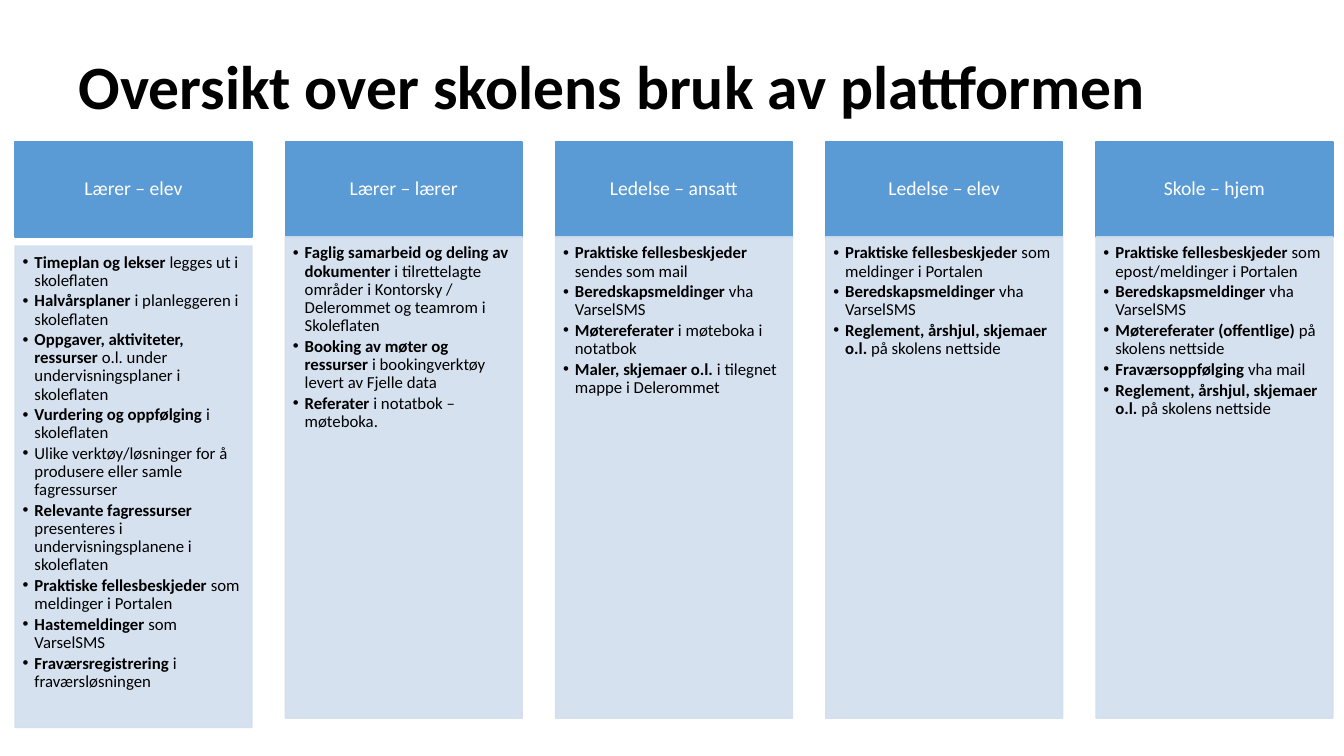
from dataclasses import dataclass

from lxml.etree import SubElement
from pptx import Presentation
from pptx.dml.color import RGBColor
from pptx.enum.shapes import MSO_SHAPE
from pptx.enum.text import MSO_ANCHOR, PP_ALIGN
from pptx.oxml.ns import qn
from pptx.shapes.autoshape import Shape
from pptx.slide import Slide
from pptx.text.text import TextFrame, _Paragraph
from pptx.util import Cm, Pt


@dataclass(frozen=True)
class Theme:
    font: str = "Calibri"
    black: RGBColor = RGBColor(0x00, 0x00, 0x00)
    white: RGBColor = RGBColor(0xFF, 0xFF, 0xFF)
    heading_blue: RGBColor = RGBColor(0x5B, 0x9B, 0xD5)
    body_blue: RGBColor = RGBColor(0xD2, 0xDE, 0xEF)
    body_opacity: int = 90
    title_size: int = 44
    heading_size: int = 14
    body_size: int = 12
    line_spacing: float = 0.9


@dataclass(frozen=True)
class Practice:
    emphasis: str
    detail: str = ""


@dataclass(frozen=True)
class Channel:
    heading: str
    practices: tuple[Practice, ...]
    gap: float = 0


@dataclass(frozen=True)
class Area:
    left: float
    top: float
    width: float
    height: float


THEME = Theme()
FIRST_LEFT = 0.38
COLUMN_STEP = 6.81
COLUMN_WIDTH = 5.97
HEADING_TOP = 3.58
HEADING_HEIGHT = 2.39
BODY_HEIGHT = 12.13
BULLET_INDENT = 0.3

CHANNELS = (
    Channel("Lærer – elev", (
        Practice("Timeplan og lekser ", "legges ut i skoleflaten"),
        Practice("Halvårsplaner", " i planleggeren i skoleflaten"),
        Practice("Oppgaver, aktiviteter, ressurser ", "o.l. under undervisningsplaner i skoleflaten"),
        Practice("Vurdering og oppfølging ", "i skoleflaten"),
        Practice("", "Ulike verktøy/løsninger for å produsere eller samle fagressurser"),
        Practice("Relevante fagressurser ", "presenteres i undervisningsplanene i skoleflaten"),
        Practice("Praktiske fellesbeskjeder ", "som meldinger i Portalen"),
        Practice("Hastemeldinger", " som VarselSMS"),
        Practice("Fraværsregistrering", " i fraværsløsningen"),
    ), gap=0.23),
    Channel("Lærer – lærer", (
        Practice("Faglig samarbeid og deling av dokumenter ",
                 "i tilrettelagte områder i Kontorsky / Delerommet og teamrom i Skoleflaten"),
        Practice("Booking av møter og ressurser", " i bookingverktøy levert av Fjelle data"),
        Practice("Referater ", "i notatbok – møteboka."),
    )),
    Channel("Ledelse – ansatt", (
        Practice("Praktiske fellesbeskjeder", " sendes som mail"),
        Practice("Beredskapsmeldinger ", "vha VarselSMS"),
        Practice("Møtereferater ", "i møteboka i notatbok"),
        Practice("Maler, skjemaer o.l.", " i tilegnet mappe i Delerommet"),
    )),
    Channel("Ledelse – elev", (
        Practice("Praktiske fellesbeskjeder ", "som meldinger i Portalen"),
        Practice("Beredskapsmeldinger ", "vha VarselSMS"),
        Practice("Reglement, årshjul, skjemaer o.l. ", "på skolens nettside"),
    )),
    Channel("Skole – hjem", (
        Practice("Praktiske fellesbeskjeder ", "som epost/meldinger i Portalen"),
        Practice("Beredskapsmeldinger ", "vha VarselSMS"),
        Practice("Møtereferater (offentlige) ", "på skolens nettside"),
        Practice("Fraværsoppfølging ", "vha mail"),
        Practice("Reglement, årshjul, skjemaer o.l. ", "på skolens nettside"),
    )),
)


def add_run(paragraph: _Paragraph, wording: str, size: int, color: RGBColor, bold: bool = False) -> None:
    run = paragraph.add_run()
    run.text = wording
    run.font.name = THEME.font
    run.font.size = Pt(size)
    run.font.bold = bold
    run.font.color.rgb = color


def set_margins(frame: TextFrame, left: float, top: float, right: float, bottom: float) -> None:
    frame.margin_left, frame.margin_top = Cm(left), Cm(top)
    frame.margin_right, frame.margin_bottom = Cm(right), Cm(bottom)


def add_panel(slide: Slide, area: Area, color: RGBColor, anchor: MSO_ANCHOR) -> Shape:
    panel = slide.shapes.add_shape(
        MSO_SHAPE.RECTANGLE, Cm(area.left), Cm(area.top), Cm(area.width), Cm(area.height))
    panel.shadow.inherit = False
    panel.fill.solid()
    panel.fill.fore_color.rgb = color
    panel.line.color.rgb = color
    panel.line.width = Pt(1)
    panel.text_frame.word_wrap = True
    panel.text_frame.vertical_anchor = anchor
    return panel


def set_opacity(panel: Shape, percent: int) -> None:
    for color in panel._element.spPr.iter(qn("a:srgbClr")):
        SubElement(color, qn("a:alpha"), val=str(percent * 1000))


def add_bullet(paragraph: _Paragraph) -> None:
    properties = paragraph._p.get_or_add_pPr()
    properties.set("marL", str(Cm(BULLET_INDENT)))
    properties.set("indent", str(-Cm(BULLET_INDENT)))
    SubElement(properties, qn("a:buFont"), typeface="Arial")
    SubElement(properties, qn("a:buChar"), char="•")


def add_title(slide: Slide, wording: str) -> None:
    title = slide.shapes.add_textbox(Cm(1.73), Cm(0.76), Cm(30.66), Cm(3))
    title.text_frame.word_wrap = True
    title.text_frame.vertical_anchor = MSO_ANCHOR.MIDDLE
    paragraph = title.text_frame.paragraphs[0]
    paragraph.line_spacing = THEME.line_spacing
    add_run(paragraph, wording, THEME.title_size, THEME.black, bold=True)


def add_heading(slide: Slide, left: float, wording: str) -> None:
    area = Area(left, HEADING_TOP, COLUMN_WIDTH, HEADING_HEIGHT)
    heading = add_panel(slide, area, THEME.heading_blue, MSO_ANCHOR.MIDDLE)
    set_margins(heading.text_frame, 0.28, 0.16, 0.28, 0.16)
    paragraph = heading.text_frame.paragraphs[0]
    paragraph.alignment = PP_ALIGN.CENTER
    paragraph.line_spacing = THEME.line_spacing
    add_run(paragraph, wording, THEME.heading_size, THEME.white)


def add_practices(slide: Slide, left: float, channel: Channel) -> None:
    area = Area(left, HEADING_TOP + HEADING_HEIGHT + channel.gap, COLUMN_WIDTH, BODY_HEIGHT)
    body = add_panel(slide, area, THEME.body_blue, MSO_ANCHOR.TOP)
    set_opacity(body, THEME.body_opacity)
    frame = body.text_frame
    set_margins(frame, 0.19, 0.19, 0.24, 0.25)
    for index, practice in enumerate(channel.practices):
        paragraph = frame.add_paragraph() if index else frame.paragraphs[0]
        paragraph.alignment = PP_ALIGN.LEFT
        paragraph.line_spacing = THEME.line_spacing
        paragraph.space_after = Pt(1.8)
        add_bullet(paragraph)
        if practice.emphasis:
            add_run(paragraph, practice.emphasis, THEME.body_size, THEME.black, bold=True)
        if practice.detail:
            add_run(paragraph, practice.detail, THEME.body_size, THEME.black)


def main() -> None:
    presentation = Presentation()
    presentation.slide_width, presentation.slide_height = Cm(33.87), Cm(19.05)
    slide = presentation.slides.add_slide(presentation.slide_layouts[6])
    add_title(slide, "Oversikt over skolens bruk av plattformen")
    for index, channel in enumerate(CHANNELS):
        left = FIRST_LEFT + index * COLUMN_STEP
        add_heading(slide, left, channel.heading)
        add_practices(slide, left, channel)
    presentation.save("out.pptx")


if __name__ == "__main__":
    main()
